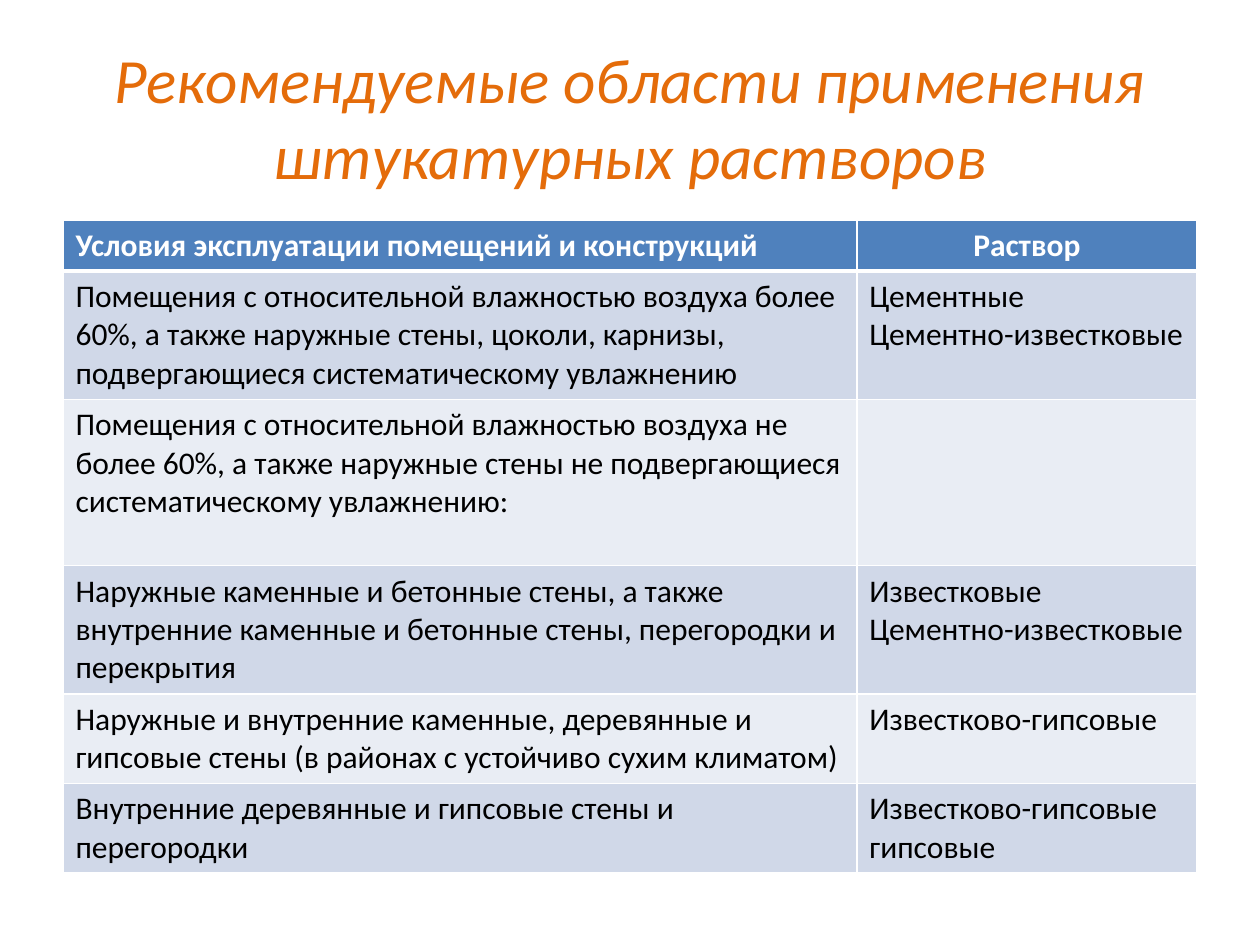
from lxml.etree import SubElement
from pptx import Presentation
from pptx.dml.color import RGBColor
from pptx.enum.text import MSO_ANCHOR, PP_ALIGN
from pptx.oxml.ns import qn
from pptx.util import Inches, Pt

TITLE = {"size": Pt(36), "italic": True}
HEAD = {"size": Pt(18), "bold": True}
BODY = {"size": Pt(18), "bold": False}

COLUMNS = [6.3, 2.7]
ROW_HEIGHTS = [0.4, 1.02, 1.32, 1.02, 0.71, 0.71]
ROWS = [
    ("Условия эксплуатации помещений и конструкций", "Раствор"),
    ("Помещения с относительной влажностью воздуха более 60%, а также наружные "
     "стены, цоколи, карнизы, подвергающиеся систематическому увлажнению",
     "Цементные\nЦементно-известковые"),
    ("Помещения с относительной влажностью воздуха не более 60%, а также наружные "
     "стены не подвергающиеся систематическому увлажнению:", ""),
    ("Наружные каменные и бетонные стены, а также внутренние каменные и бетонные "
     "стены, перегородки и перекрытия",
     "Известковые\nЦементно-известковые"),
    ("Наружные и внутренние каменные, деревянные и гипсовые стены "
     "(в районах с устойчиво сухим климатом)", "Известково-гипсовые"),
    ("Внутренние деревянные и гипсовые стены и перегородки",
     "Известково-гипсовые\nгипсовые"),
]


def rgb(value):
    return RGBColor.from_string(value)


class Deck:
    font = "Calibri"
    accent, header, white, black = "E46C0A", "4F81BD", "FFFFFF", "000000"
    bands = ["D0D8E8", "E9EDF4"]

    def __init__(self, prs):
        self.s = prs.slides.add_slide(prs.slide_layouts[6])

    def text(self, tf, text, style, color, align=PP_ALIGN.LEFT):
        tf.word_wrap = True
        tf.text = text
        for p in tf.paragraphs:
            p.alignment = align
            p.font.name = self.font
            p.font.color.rgb = rgb(color)
            for name, value in style.items():
                setattr(p.font, name, value)

    def title(self, text, left, top, width, height):
        sp = self.s.shapes.add_textbox(*map(Inches, (left, top, width, height)))
        sp.text_frame.vertical_anchor = MSO_ANCHOR.MIDDLE
        self.text(sp.text_frame, text, TITLE, self.accent, PP_ALIGN.CENTER)

    def border(self, cell, widths):
        tcPr = cell._tc.get_or_add_tcPr()
        for index, (side, width) in enumerate(widths.items()):
            ln = tcPr.makeelement(qn("a:" + side), {"w": str(Pt(width))})
            fill = SubElement(ln, qn("a:solidFill"))
            SubElement(fill, qn("a:srgbClr"), val=self.white)
            tcPr.insert(index, ln)

    def table(self, rows, left, top, columns, heights):
        frame = self.s.shapes.add_table(
            len(rows), len(columns), Inches(left), Inches(top),
            Inches(sum(columns)), Inches(sum(heights)))
        table = frame.table
        for column, width in zip(table.columns, columns):
            column.width = Inches(width)
        for i, (row, height) in enumerate(zip(rows, heights)):
            table.rows[i].height = Inches(height)
            for j, text in enumerate(row):
                cell = table.cell(i, j)
                head = i == 0
                cell.fill.solid()
                cell.fill.fore_color.rgb = rgb(
                    self.header if head else self.bands[(i - 1) % 2])
                self.border(cell, {"lnL": 1, "lnR": 1,
                                   "lnT": 3 if i == 1 else 1,
                                   "lnB": 3 if head else 1})
                self.text(cell.text_frame, text, HEAD if head else BODY,
                          self.white if head else self.black,
                          PP_ALIGN.CENTER if head and j else PP_ALIGN.LEFT)


def main():
    prs = Presentation()
    prs.slide_width, prs.slide_height = Inches(10), Inches(7.5)
    deck = Deck(prs)

    # Heading
    deck.title("Рекомендуемые области применения штукатурных растворов",
               0.5, 0.3, 9, 1.25)

    # Conditions and matching mortars
    deck.table(ROWS, 0.5, 1.75, COLUMNS, ROW_HEIGHTS)

    prs.save("out.pptx")


if __name__ == "__main__":
    main()
